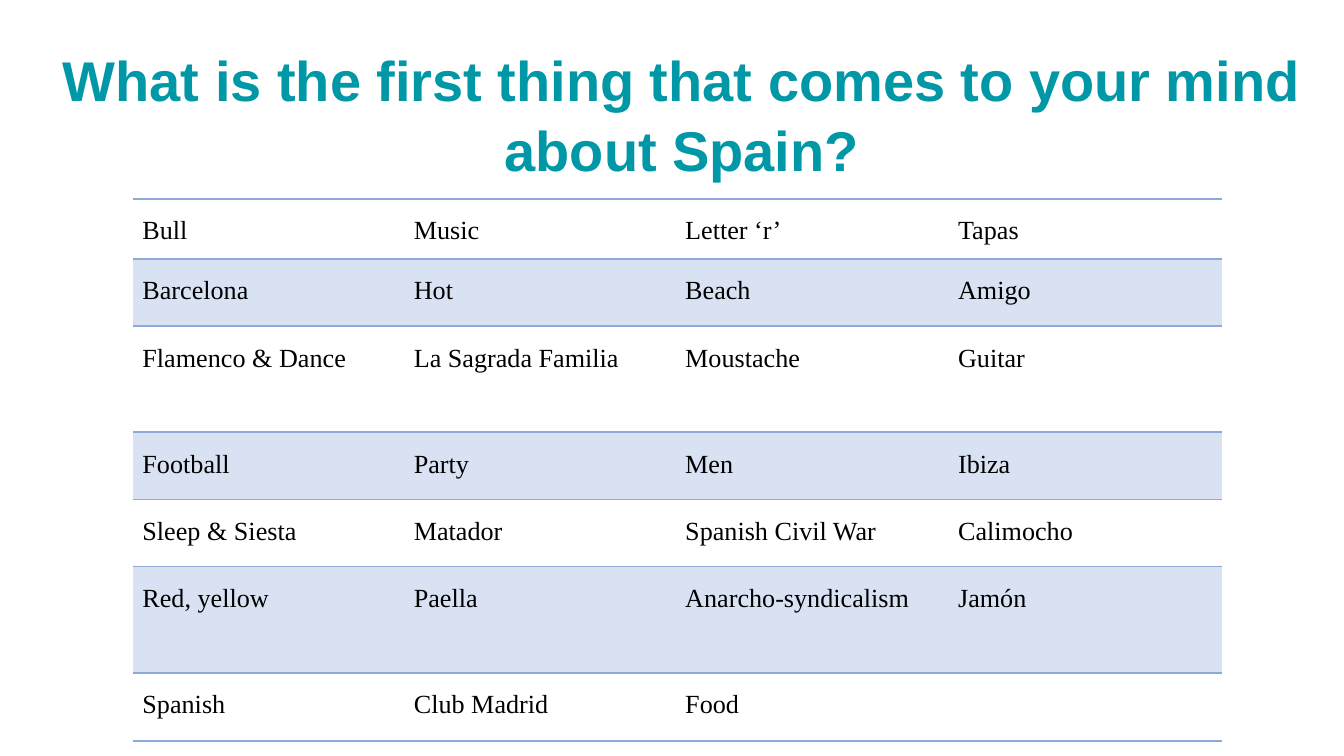
"""Build a slide with a title and a banded table of associations with Spain."""
from lxml import etree
from pptx import Presentation
from pptx.dml.color import RGBColor
from pptx.enum.text import MSO_ANCHOR, MSO_AUTO_SIZE, PP_ALIGN
from pptx.oxml.ns import qn
from pptx.util import Pt

TOP = MSO_ANCHOR.TOP
NO_FIT = MSO_AUTO_SIZE.NONE
CENTER = PP_ALIGN.CENTER
TITLE_ONLY = 5

TEAL = RGBColor(0x00, 0x97, 0xA7)
BLACK = RGBColor(0x00, 0x00, 0x00)
BAND = RGBColor(0xD9, 0xE2, 0xF3)
RULE = RGBColor(0x8E, 0xAA, 0xDB)

WORDS = [
    ["Bull", "Music", "Letter ‘r’", "Tapas"],
    ["Barcelona", "Hot", "Beach", "Amigo"],
    ["Flamenco & Dance", "La Sagrada Familia", "Moustache", "Guitar"],
    ["Football", "Party", "Men", "Ibiza"],
    ["Sleep & Siesta", "Matador", "Spanish Civil War", "Calimocho"],
    ["Red, yellow", "Paella", "Anarcho-syndicalism", "Jamón"],
    ["Spanish", "Club Madrid", "Food", ""],
]
COL_WIDTHS = [145.4, 145.4, 146.2, 146.2]
ROW_HEIGHTS = [31, 36, 56.9, 36, 36, 56.9, 36]


class SlideBuilder:
    """Hold the text style and the current slide."""

    title_font, table_font = "Arial", "Times New Roman"
    title_size, table_size = Pt(30), Pt(14)

    def __init__(self, prs):
        self.s = prs.slides.add_slide(prs.slide_layouts[TITLE_ONLY])

    def style(self, p, name, size, color, bold=False):
        for r in p.runs:
            r.font.name, r.font.size, r.font.bold = name, size, bold
            r.font.color.rgb = color

    def title(self, text, x, y, w, h):
        sp = self.s.shapes.title
        sp.left, sp.top, sp.width, sp.height = Pt(x), Pt(y), Pt(w), Pt(h)
        tf = sp.text_frame
        tf.text = text
        tf.word_wrap, tf.auto_size, tf.vertical_anchor = True, NO_FIT, TOP
        tf.margin_left = tf.margin_right = Pt(7.2)
        tf.margin_top = tf.margin_bottom = Pt(7.2)
        p = tf.paragraphs[0]
        p.alignment, p.line_spacing = CENTER, 1.04
        self.style(p, self.title_font, self.title_size, TEAL, True)

    def borders(self, cell):
        tc_pr = cell._tc.get_or_add_tcPr()
        for side in ("lnL", "lnR"):
            ln = etree.SubElement(tc_pr, qn(f"a:{side}"))
            etree.SubElement(ln, qn("a:noFill"))
        for side in ("lnT", "lnB"):
            ln = etree.SubElement(tc_pr, qn(f"a:{side}"), w=str(Pt(1)))
            fill = etree.SubElement(ln, qn("a:solidFill"))
            etree.SubElement(fill, qn("a:srgbClr"), val=str(RULE))

    def cell(self, cell, text, banded):
        cell.text = text
        cell.vertical_anchor = TOP
        cell.margin_left = cell.margin_right = Pt(5.04)
        cell.margin_top = cell.margin_bottom = Pt(7.2)
        p = cell.text_frame.paragraphs[0]
        p.line_spacing = 1.15
        self.style(p, self.table_font, self.table_size, BLACK)
        self.borders(cell)
        if banded:
            cell.fill.solid()
            cell.fill.fore_color.rgb = BAND
        else:
            cell.fill.background()

    def table(self, rows, x, y, widths, heights):
        frame = self.s.shapes.add_table(
            len(rows), len(widths), Pt(x), Pt(y), Pt(sum(widths)), Pt(sum(heights)))
        table = frame.table
        table.first_row = table.horz_banding = False
        for col, width in zip(table.columns, widths):
            col.width = Pt(width)
        for i, (row, height) in enumerate(zip(table.rows, heights)):
            row.height = Pt(height)
            for cell, text in zip(row.cells, rows[i]):
                self.cell(cell, text, i % 2 == 1)


def main():
    prs = Presentation()
    prs.slide_width, prs.slide_height = Pt(720), Pt(405)
    slide = SlideBuilder(prs)
    slide.title("What is the first thing that comes to your mind about Spain?",
                16.5, 16, 697.7, 45.4)
    slide.table(WORDS, 71.3, 106.5, COL_WIDTHS, ROW_HEIGHTS)
    prs.save("out.pptx")


if __name__ == "__main__":
    main()
